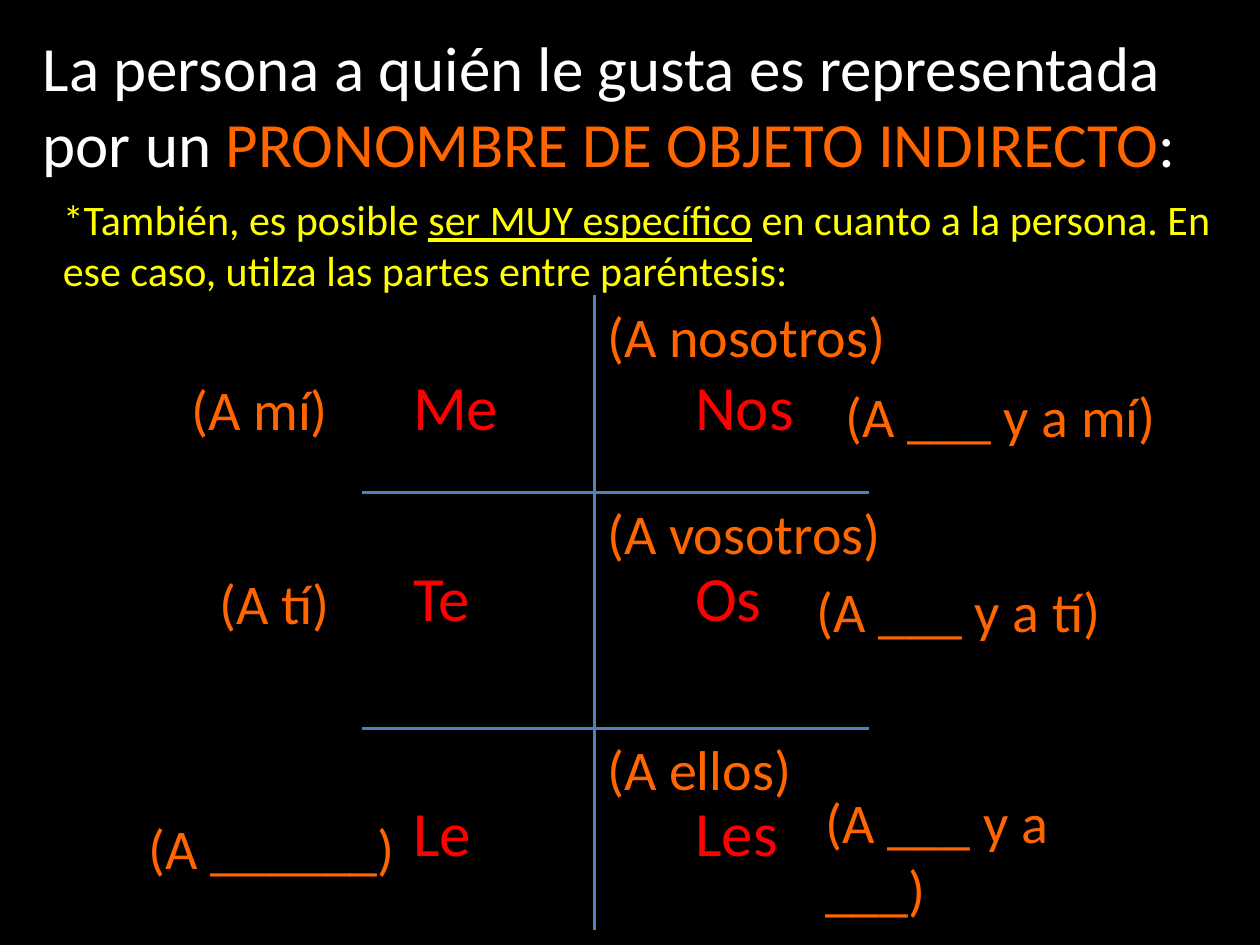
from lxml.etree import SubElement
from pptx import Presentation
from pptx.dml.color import RGBColor
from pptx.enum.shapes import MSO_CONNECTOR as Connector
from pptx.enum.text import MSO_AUTO_SIZE as AutoSize
from pptx.oxml.ns import qn
from pptx.util import Inches, Pt

BLACK = RGBColor(0x00, 0x00, 0x00)
WHITE = RGBColor(0xFF, 0xFF, 0xFF)
ORANGE = RGBColor(0xFF, 0x66, 0x00)
RED = RGBColor(0xFF, 0x00, 0x00)
YELLOW = RGBColor(0xFF, 0xFF, 0x00)
BLUE = RGBColor(0x4F, 0x81, 0xBD)

AXIS_X = 4.72
GRID_TOP, GRID_BOTTOM = 2.34, 7.38
GRID_LEFT, GRID_RIGHT = 2.87, 6.9
ROW_TOPS = (GRID_TOP, 3.91, 5.78)

PRONOUN_LEFTS = (3.18, 5.42)
PRONOUN_ROWS = ((2.87, "Me", "Nos"), (4.38, "Te", "Os"), (6.25, "Le", "Les"))
PLURALS = ("(A nosotros)", "(A vosotros)", "(A ellos)")
CLARIFIERS = (
    (1.42, 2.92, 0.64, "(A mí)"),
    (1.64, 4.46, 0.64, "(A tí)"),
    (1.08, 6.41, 0.64, "(A ______)"),
    (6.61, 2.98, 0.64, "(A ___ y a mí)"),
    (6.38, 4.53, 0.64, "(A ___ y a tí)"),
    (6.45, 6.2, 1.18, "(A ___ y a ___)"),
)


class SlideWriter:
    font_name = "Calibri"
    line_width = Pt(2)

    def __init__(self, page):
        self.page = page

    def background(self, color):
        fill = self.page.background.fill
        fill.solid()
        fill.fore_color.rgb = color

    def text(self, left, top, width, height, size, color, *spans):
        """Add one paragraph; each span is (text, own colour or None, underline)."""
        box = self.page.shapes.add_textbox(
            Inches(left), Inches(top), Inches(width), Inches(height))
        frame = box.text_frame
        frame.word_wrap = True
        frame.auto_size = AutoSize.SHAPE_TO_FIT_TEXT
        para = frame.paragraphs[0]
        para.font.name = self.font_name
        para.font.size = Pt(size)
        para.font.color.rgb = color
        for text, own_color, underline in spans:
            span = para.add_run()
            span.text = text
            span.font.name = self.font_name
            span.font.size = Pt(size)
            span.font.color.rgb = own_color or color
            if underline:
                span.font.underline = True

    def label(self, left, top, width, height, size, color, text):
        self.text(left, top, width, height, size, color, (text, None, False))

    def line(self, x1, y1, x2, y2):
        line = self.page.shapes.add_connector(
            Connector.STRAIGHT, Inches(x1), Inches(y1), Inches(x2), Inches(y2))
        line.line.color.rgb = BLUE
        line.line.width = self.line_width
        SubElement(line._element.spPr, qn("a:effectLst"))


def main():
    deck = Presentation()
    deck.slide_width, deck.slide_height = Inches(10), Inches(7.5)
    writer = SlideWriter(deck.slides.add_slide(deck.slide_layouts[6]))
    writer.background(BLACK)

    writer.text(0.24, 0.18, 9.52, 1.31, 36, WHITE,
                ("La persona a quién le gusta es representada por un ", None, False),
                ("PRONOMBRE DE OBJETO INDIRECTO", ORANGE, False),
                (":", None, False))

    writer.line(AXIS_X, GRID_TOP, AXIS_X, GRID_BOTTOM)
    for top in ROW_TOPS[1:]:
        writer.line(GRID_RIGHT, top, GRID_LEFT, top)

    for top, *pronouns in PRONOUN_ROWS:
        for left, pronoun in zip(PRONOUN_LEFTS, pronouns):
            writer.label(left, top, 1.03, 0.71, 36, RED, pronoun)

    writer.text(0.4, 1.49, 9.36, 0.91, 24, YELLOW,
                ("*También, es posible ", None, False),
                ("ser MUY específico", None, True),
                (" en cuanto a la persona. En ese caso, utilza las partes "
                 "entre paréntesis:", None, False))

    for top, plural in zip(ROW_TOPS, PLURALS):
        writer.label(AXIS_X, top, 2.79, 0.64, 32, ORANGE, plural)
    for left, top, height, clarifier in CLARIFIERS:
        writer.label(left, top, 2.79, height, 32, ORANGE, clarifier)

    deck.save("out.pptx")


if __name__ == "__main__":
    main()
